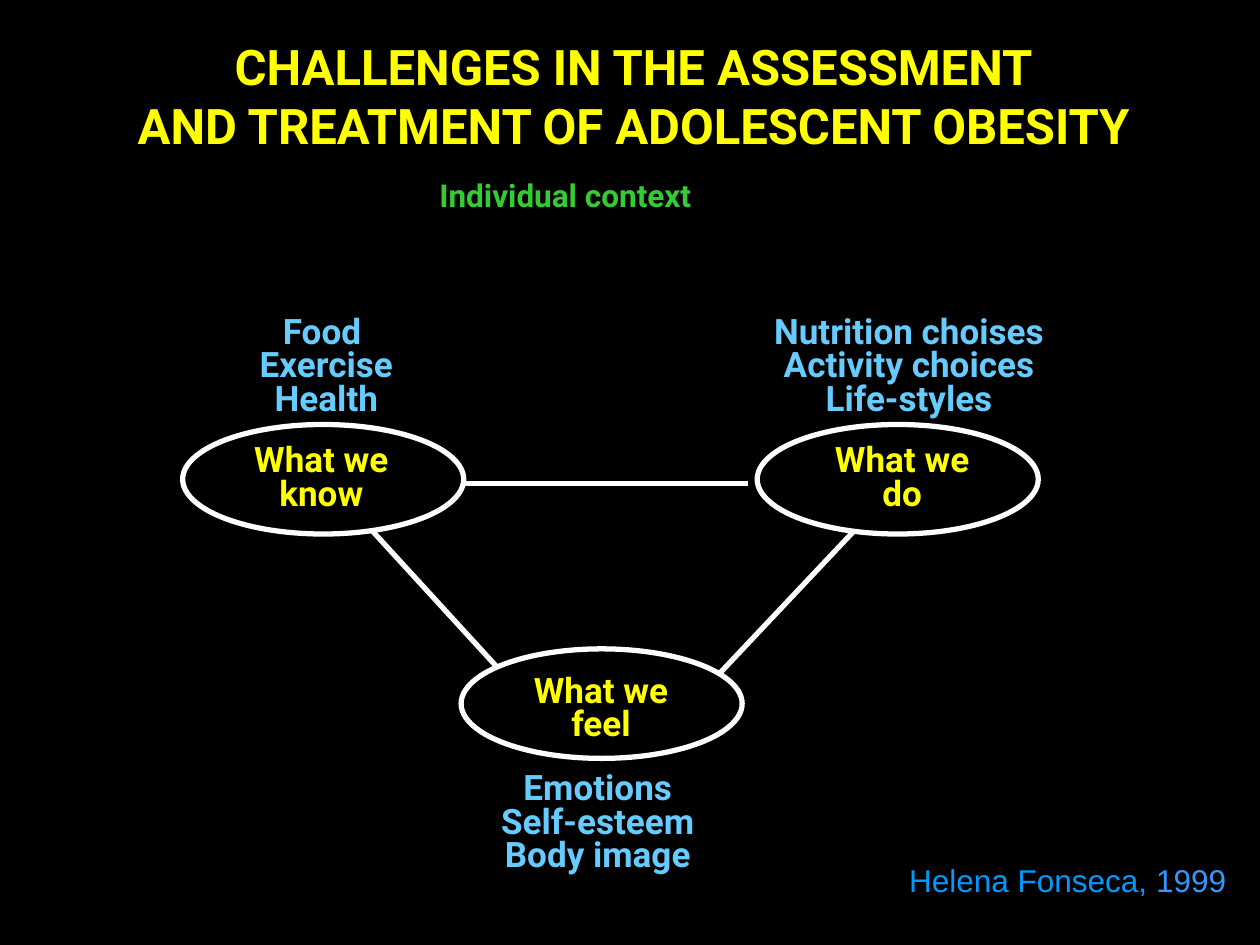
import pptx
import pptx.dml.color
import pptx.enum.shapes
import pptx.enum.text
import pptx.oxml.ns
import pptx.util
import lxml.etree

Pt = pptx.util.Pt
ALIGN = pptx.enum.text.PP_ALIGN
YELLOW, GREEN, SKY, WHITE, BLACK = "FFFF00", "33CC33", "66CCFF", "FFFFFF", "000000"


def color(value):
    return pptx.dml.color.RGBColor.from_string(value)


class SlideBuilder:
    font = "Roboto"
    line_width = 3

    def __init__(self, slide):
        self.slide = slide
        fill = slide.background.fill
        fill.solid()
        fill.fore_color.rgb = color(BLACK)

    def fill_text(self, box, lines, size, align=ALIGN.CENTER, spacing=1.0,
                  font=None, bold=True, wrap=False):
        frame = box.text_frame
        frame.word_wrap = wrap
        frame.auto_size = pptx.enum.text.MSO_AUTO_SIZE.SHAPE_TO_FIT_TEXT
        frame.vertical_anchor = pptx.enum.text.MSO_ANCHOR.TOP
        for index, runs in enumerate(lines):
            para = frame.add_paragraph() if index else frame.paragraphs[0]
            para.alignment = align
            para.line_spacing = spacing
            para.space_before = Pt(0)
            for text, ink in runs:
                span = para.add_run()
                span.text = text
                span.font.name = font or self.font
                span.font.size = Pt(size)
                span.font.bold = bold
                span.font.color.rgb = color(ink)

    def title(self, left, top, width, height, lines):
        box = self.slide.shapes.title
        box.left, box.top, box.width, box.height = map(Pt, (left, top, width, height))
        self.fill_text(box, [[(line, YELLOW)] for line in lines], 28)

    def text(self, left, top, width, height, lines, size, **style):
        box = self.slide.shapes.add_textbox(*map(Pt, (left, top, width, height)))
        self.fill_text(box, lines, size, **style)

    def label(self, left, top, width, height, lines, ink):
        self.text(left, top, width, height, [[(line, ink)] for line in lines],
                  20, spacing=0.8)

    def ellipse(self, left, top, width, height):
        shape = self.slide.shapes.add_shape(
            pptx.enum.shapes.MSO_SHAPE.OVAL, *map(Pt, (left, top, width, height)))
        shape.shadow.inherit = False
        shape.fill.solid()
        shape.fill.fore_color.rgb = color(BLACK)
        self.outline(shape)

    def connector(self, *ends):
        link = self.slide.shapes.add_connector(
            pptx.enum.shapes.MSO_CONNECTOR.STRAIGHT, *map(Pt, ends))
        self.outline(link)
        lxml.etree.SubElement(link._element.spPr, pptx.oxml.ns.qn("a:effectLst"))

    def outline(self, shape):
        shape.line.color.rgb = color(WHITE)
        shape.line.width = Pt(self.line_width)


def main():
    deck = pptx.Presentation()
    deck.slide_width, deck.slide_height = Pt(720), Pt(540)
    page = SlideBuilder(deck.slides.add_slide(deck.slide_layouts[5]))

    page.title(46, 17.3, 632, 74,
               ["CHALLENGES IN THE ASSESSMENT", "AND TREATMENT OF ADOLESCENT OBESITY"])
    page.text(244, 77.8, 235.5, 62, [[("Individual context", GREEN)]], 18,
              align=ALIGN.LEFT, spacing=1.9)

    for ends in ((265.7, 276.5, 427.7, 276.5),
                 (490.3, 301, 405.4, 391),
                 (206, 296, 292.3, 390.2)):
        page.connector(*ends)

    nodes = [
        ((104.4, 242.6), (131.8, 251.3), "know",
         (137.5, 177.8, 98), ["Food ", "Exercise", "Health"]),
        ((432.7, 242.6), (463.7, 251.3), "do",
         (427, 177.8, 185), ["Nutrition choises", "Activity choices", "Life-styles"]),
        ((263.5, 370.8), (291.6, 383), "feel",
         (274.3, 438.5, 134.6), ["Emotions", "Self-esteem", "Body image"]),
    ]
    for ellipse, caption, verb, topics, lines in nodes:
        page.ellipse(*ellipse, 160.6, 62.6)
        page.label(*caption, 103.7, 46, ["What we", verb], YELLOW)
        page.label(*topics, 64.8, lines, SKY)

    page.text(402.5, 488.2, 305.3, 36.7,
              [[("Helena Fonseca, ", "0099FF"), ("1999", "3399FF")]], 18,
              align=ALIGN.RIGHT, font="Arial", bold=False, wrap=True)

    deck.save("out.pptx")


if __name__ == "__main__":
    main()
